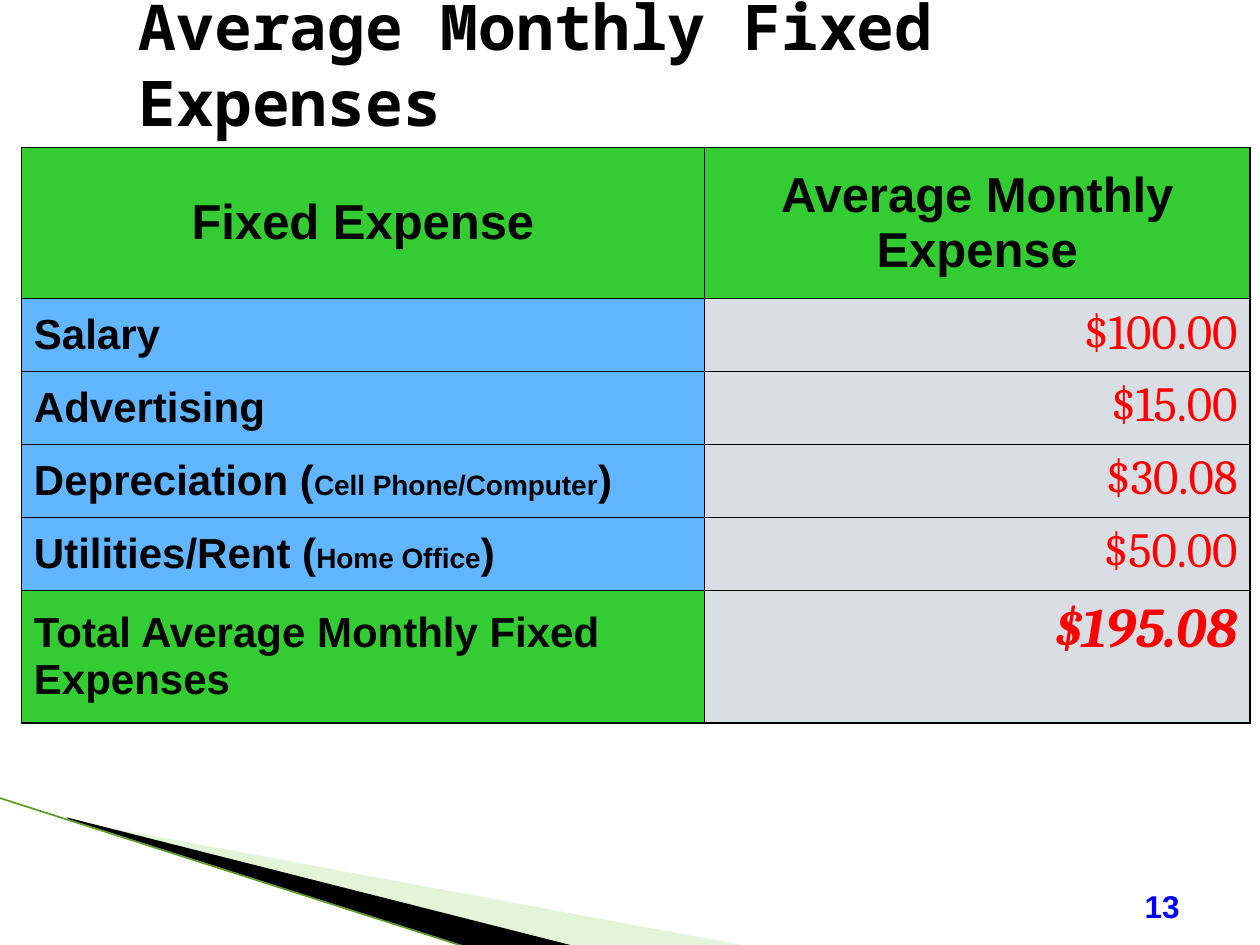
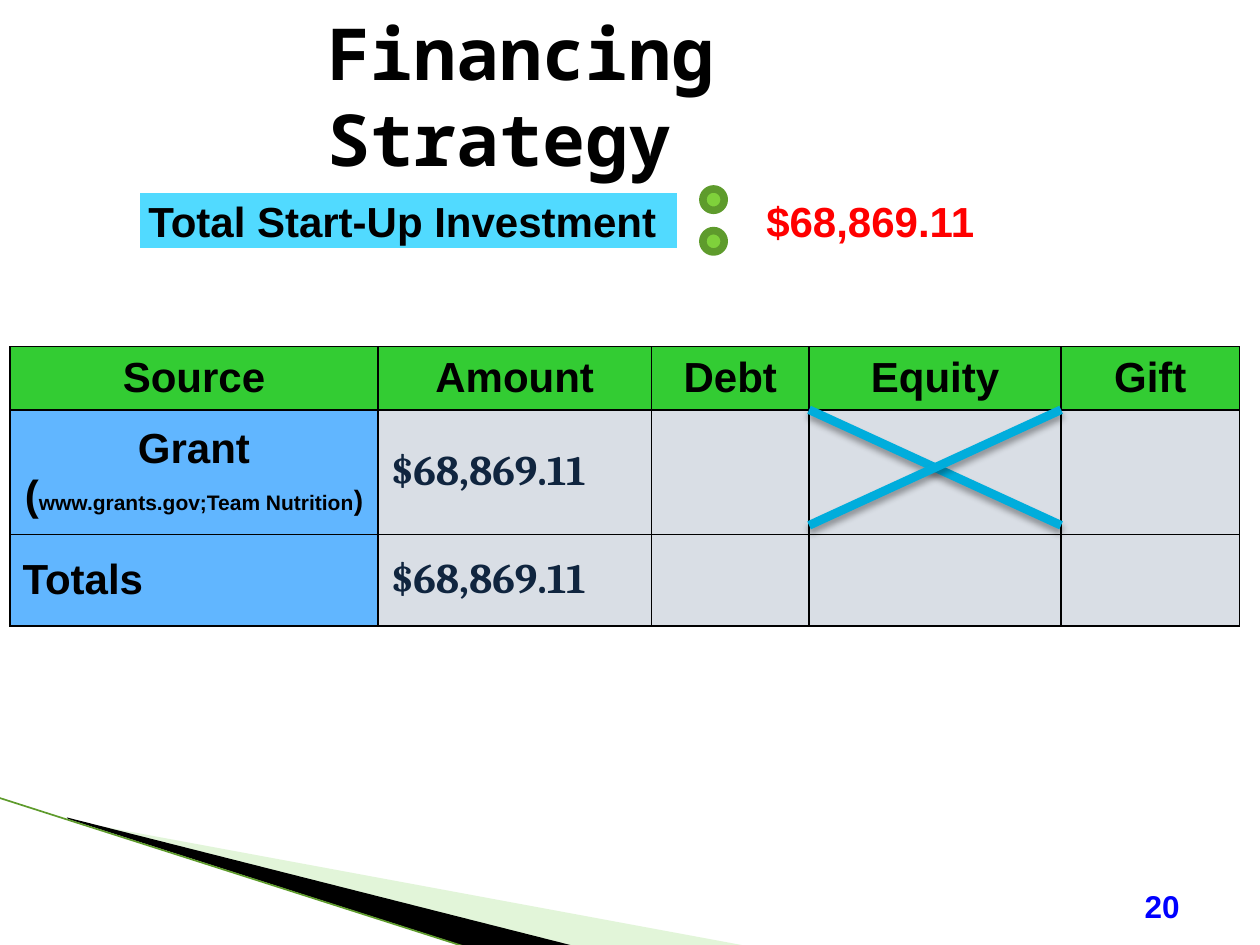
"""Build two finance slides: fixed expenses and the financing strategy."""
import pptx
import pptx.dml.color
import pptx.enum.shapes
import pptx.enum.text
import pptx.oxml
import pptx.oxml.ns
import pptx.util

Cm, Pt = pptx.util.Cm, pptx.util.Pt
RGBColor = pptx.dml.color.RGBColor
Kind = pptx.enum.shapes.MSO_SHAPE
Line = pptx.enum.shapes.MSO_CONNECTOR.STRAIGHT
Align = pptx.enum.text.PP_ALIGN
Anchor = pptx.enum.text.MSO_ANCHOR
NS = pptx.oxml.ns.nsdecls("a")

BLACK = RGBColor(0x00, 0x00, 0x00)
WHITE = RGBColor(0xFF, 0xFF, 0xFF)
RED = RGBColor(0xFF, 0x00, 0x00)
BLUE = RGBColor(0x00, 0x00, 0xFF)
NAVY = RGBColor(0x10, 0x25, 0x3F)
GREEN = RGBColor(0x33, 0xCC, 0x33)
SKY = RGBColor(0x61, 0xB6, 0xFF)
GREY = RGBColor(0xD9, 0xDE, 0xE5)
CYAN = RGBColor(0x51, 0xDA, 0xFF)
TEAL = RGBColor(0x00, 0xAD, 0xDC)
MINT = RGBColor(0xB8, 0xE7, 0xA1)
LIME = RGBColor(0x7F, 0xD1, 0x3B)
LEAF = RGBColor(0x5E, 0x9B, 0x2C)

BASE = {"name": "Arial", "size": Pt(24), "bold": True}
HEAD = {"size": Pt(28)}
CASH = {"name": "Cambria", "size": Pt(28), "bold": False}
TOTAL = {"name": "Cambria", "size": Pt(32), "italic": True}
SUM = {"name": "Cambria"}
NOTE = {"size": Pt(16)}
TINY = {"size": Pt(12)}


def write(frame, runs, align=Align.LEFT, color=BLACK):
    """Fill the first paragraph with (text, format) runs."""
    frame.word_wrap = True
    para = frame.paragraphs[0]
    para.alignment = align
    for text, form in runs:
        run = para.add_run()
        run.text = text
        for key, val in {**BASE, **form}.items():
            setattr(run.font, key, val)
        run.font.color.rgb = color


def grid(slide, left, top, cols, rows, cells):
    """Add a table whose cells are (runs, align, color, fill, anchor)."""
    frame = slide.shapes.add_table(len(rows), len(cols), Cm(left), Cm(top),
                                   Cm(sum(cols)), Cm(sum(rows)))
    table = frame.table
    for col, width in zip(table.columns, cols):
        col.width = Cm(width)
    for row, height, line in zip(table.rows, rows, cells):
        row.height = Cm(height)
        for cell, (runs, align, color, fill, anchor) in zip(row.cells, line):
            props = cell._tc.get_or_add_tcPr()
            for side in "LRTB":
                props.append(pptx.oxml.parse_xml(
                    f'<a:ln{side} {NS} w="12700"><a:solidFill>'
                    f'<a:srgbClr val="{BLACK}"/></a:solidFill></a:ln{side}>'))
            cell.fill.solid()
            cell.fill.fore_color.rgb = fill
            cell.vertical_anchor = anchor
            write(cell.text_frame, runs, align, color)


deck = pptx.Presentation()
deck.slide_width, deck.slide_height = Cm(25.4), Cm(19.05)

PAGES = [
    ("Average Monthly Fixed Expenses", 36, (2.54, 0, 22.02, 2.54), "13"),
    ("Financing Strategy", 41, (6.35, 0.43, 14.81, 2.97), "20"),
]
WEDGES = [
    (MINT, 40, [(1.4, 16.54), (15.11, 19.08), (11.58, 19.08), (1.4, 16.51)]),
    (BLACK, 100, [(1.35, 16.48), (11.61, 19.08), (9.45, 19.1), (1.37, 16.51)]),
]

for name, size, box, number in PAGES:
    slide = deck.slides.add_slide(deck.slide_layouts[5])
    title = slide.shapes.title
    title.left, title.top, title.width, title.height = map(Cm, box)
    title.text_frame.auto_size = pptx.enum.text.MSO_AUTO_SIZE.NONE
    title.text_frame.vertical_anchor = Anchor.MIDDLE
    write(title.text_frame, [(name, {"name": "Noto Sans Mono", "size": Pt(size)})])

    for color, alpha, points in WEDGES:
        points = [(Cm(x), Cm(y)) for x, y in points]
        pen = slide.shapes.build_freeform(*points[0])
        pen.add_line_segments(points[1:])
        wedge = pen.convert_to_shape()
        wedge.shadow.inherit = False
        wedge.line.fill.background()
        wedge.fill.solid()
        wedge.fill.fore_color.rgb = color
        tint = wedge._element.spPr.find(".//" + pptx.oxml.ns.qn("a:srgbClr"))
        tint.append(pptx.oxml.parse_xml(f'<a:alpha {NS} val="{alpha * 1000}"/>'))

    edge = slide.shapes.add_connector(Line, Cm(-0.03), Cm(16.08), Cm(9.42), Cm(19.1))
    edge.line.color.rgb = LEAF
    edge.line.width = Pt(0.95)
    edge._element.spPr.append(pptx.oxml.parse_xml(f"<a:effectLst {NS}/>"))

    foot = slide.shapes.add_textbox(Cm(22.71), Cm(17.98), Cm(1.07), Cm(0.58))
    foot.text_frame.margin_left = foot.text_frame.margin_right = 0
    foot.text_frame.vertical_anchor = Anchor.MIDDLE
    write(foot.text_frame, [(number, {"size": Pt(18)})], Align.RIGHT, BLUE)

costs, funds = deck.slides

ITEMS = [
    ([("Salary", {})], "$100.00"),
    ([("Advertising", {})], "$15.00"),
    ([("Depreciation (", {}), ("Cell Phone/Computer", NOTE), (")", {})], "$30.08"),
    ([("Utilities/Rent (", {}), ("Home Office", NOTE), (")", {})], "$50.00"),
]
cells = [[([(text, HEAD)], Align.CENTER, BLACK, GREEN, Anchor.MIDDLE)
          for text in ("Fixed Expense", "Average Monthly Expense")]]
for label, cost in ITEMS:
    cells.append([(label, Align.LEFT, BLACK, SKY, Anchor.MIDDLE),
                  ([(cost, CASH)], Align.RIGHT, RED, GREY, Anchor.TOP)])
cells.append([([("Total Average Monthly Fixed Expenses", {})],
               Align.LEFT, BLACK, GREEN, Anchor.MIDDLE),
              ([("$195.08", TOTAL)], Align.RIGHT, RED, GREY, Anchor.TOP)])
grid(costs, 0.43, 2.97, [13.77, 11], [3.05] + [1.47] * 4 + [2.67], cells)

GRANT = [("Grant (", {}), ("www.grants.gov;Team Nutrition", TINY), (")", NOTE)]
blank = ([], Align.LEFT, BLACK, GREY, Anchor.MIDDLE)
cells = [[([(text, {})], Align.CENTER, BLACK, GREEN, Anchor.MIDDLE)
          for text in ("Source", "Amount", "Debt", "Equity", "Gift")]]
for label, align in ((GRANT, Align.CENTER), ([("Totals", {})], Align.LEFT)):
    cells.append([(label, align, BLACK, SKY, Anchor.MIDDLE),
                  ([("$68,869.11", SUM)], Align.LEFT, NAVY, GREY, Anchor.MIDDLE)]
                 + [blank] * 3)
grid(funds, 0.2, 6.99, [7.42, 5.51, 3.18, 5.08, 3.6], [1.09, 2.51, 1.85], cells)

for text, left, width, fill, color, align in (
        ("$68,869.11", 14.61, 5.28, WHITE, RED, Align.RIGHT),
        ("Total Start-Up Investment", 2.74, 11, CYAN, BLACK, Align.LEFT)):
    label = funds.shapes.add_shape(Kind.RECTANGLE, Cm(left), Cm(3.81), Cm(width), Cm(1.27))
    label.shadow.inherit = False
    label.fill.solid()
    label.fill.fore_color.rgb = fill
    label.line.color.rgb = WHITE
    label.line.width = Pt(5)
    label.text_frame.vertical_anchor = Anchor.TOP
    write(label.text_frame, [(text, {})], align, color)

for start, end in ((16.31, 21.39), (21.39, 16.31)):
    cross = funds.shapes.add_connector(Line, Cm(start), Cm(8.26), Cm(end), Cm(10.59))
    cross.line.color.rgb = TEAL
    cross.line.width = Pt(5)
    cross._element.spPr.append(pptx.oxml.parse_xml(
        f'<a:effectLst {NS}><a:outerShdw blurRad="{Pt(4)}" dist="{Pt(3)}" '
        f'dir="5400000" rotWithShape="0"><a:srgbClr val="{BLACK}">'
        '<a:alpha val="35000"/></a:srgbClr></a:outerShdw></a:effectLst>'))

for top in (3.81, 4.65):
    dot = funds.shapes.add_shape(Kind.FLOWCHART_CONNECTOR, Cm(14.17), Cm(top),
                                 Cm(0.43), Cm(0.43))
    dot.shadow.inherit = False
    dot.fill.solid()
    dot.fill.fore_color.rgb = LIME
    dot.line.color.rgb = LEAF
    dot.line.width = Pt(4.33)

deck.save("out.pptx")
